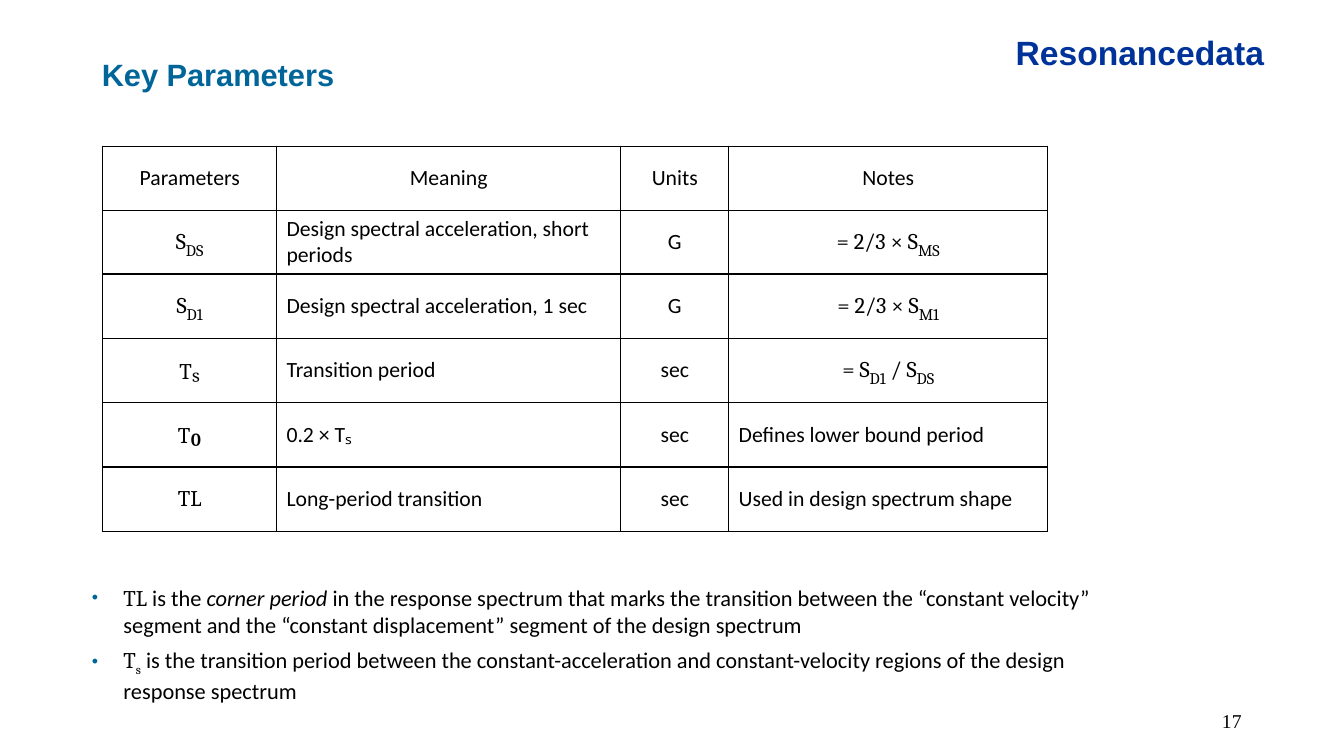
"""Build the Key Parameters slide: a table of spectrum parameters with two notes."""
import lxml.etree
import pptx
import pptx.dml.color
import pptx.enum.text
import pptx.oxml.ns
import pptx.util

Pt = pptx.util.Pt
ALIGN = pptx.enum.text.PP_ALIGN
ANCHOR = pptx.enum.text.MSO_ANCHOR

COLORS = {"ink": "000000", "paper": "FFFFFF", "heading": "006699", "wordmark": "003399"}

FORMATS = {
    "heading": {"name": "Arial", "size": Pt(22), "bold": True, "color": "heading"},
    "wordmark": {"name": "Arial", "size": Pt(24), "bold": True, "color": "wordmark"},
    "number": {"name": "Times New Roman", "size": Pt(14), "color": "ink"},
    "cell": {"name": "Calibri", "size": Pt(15.5), "color": "ink"},
    "symbol": {"name": "Cambria", "size": Pt(16), "color": "ink"},
    "glyph": {"name": "Cambria", "size": Pt(20), "color": "ink"},
    "sub": {"name": "Cambria", "size": Pt(20), "color": "ink", "baseline": -25000},
    "note": {"name": "Calibri", "size": Pt(16), "color": "ink"},
    "term": {"name": "Calibri", "size": Pt(16), "italic": True, "color": "ink"},
    "note_sub": {"name": "Cambria", "size": Pt(16), "color": "ink", "baseline": -25000},
}

HEADING = [("Key Parameters", "heading")]
WORDMARK = [("Resonancedata", "wordmark")]
NUMBER = [("17", "number")]

HEADERS = ["Parameters", "Meaning", "Units", "Notes"]
PARAMETERS = [
    ([("S", "symbol"), ("DS", "sub")], "Design spectral acceleration, short periods", "G",
     [("= 2/3 × S", "symbol"), ("MS", "sub")]),
    ([("S", "symbol"), ("D1", "sub")], "Design spectral acceleration, 1 sec", "G",
     [("= 2/3 × S", "symbol"), ("M1", "sub")]),
    ([("T", "symbol"), ("ₛ", "glyph")], "Transition period", "sec",
     [("= S", "symbol"), ("D1", "sub"), (" / S", "symbol"), ("DS", "sub")]),
    ([("T", "symbol"), ("₀", "glyph")], "0.2 × Tₛ", "sec", "Defines lower bound period"),
    ([("TL", "symbol")], "Long-period transition", "sec", "Used in design spectrum shape"),
]
NOTES = [
    [("TL", "symbol"), (" is the ", "note"), ("corner period", "term"),
     (" in the response spectrum that marks the transition between the “constant velocity” "
      "segment and the “constant displacement” segment of the design spectrum", "note")],
    [("T", "symbol"), ("s", "note_sub"),
     (" is the transition period between the constant-acceleration and constant-velocity "
      "regions of the design response spectrum", "note")],
]

COLUMN_WIDTHS = [124, 246, 77, 228]
ROW_HEIGHTS = [46, 42, 46, 46, 46, 46]
UNITS_COLUMN = 2


def rgb(color):
    return pptx.dml.color.RGBColor.from_string(COLORS[color])


def add_element(parent, tag, **attributes):
    element = lxml.etree.SubElement(parent, pptx.oxml.ns.qn(tag))
    for key, value in attributes.items():
        element.set(key, value)
    return element


def write(paragraph, pieces, align=ALIGN.LEFT):
    paragraph.alignment = align
    for words, style in pieces:
        run = paragraph.add_run()
        run.text = words
        for key, value in FORMATS[style].items():
            if key == "color":
                run.font.color.rgb = rgb(value)
            elif key == "baseline":
                run._r.get_or_add_rPr().set(key, str(value))
            else:
                setattr(run.font, key, value)


def place(shape, left, top, width, height, wrap=True, anchor=ANCHOR.TOP):
    bounds = {"left": left, "top": top, "width": width, "height": height}
    for key, value in bounds.items():
        setattr(shape, key, Pt(value))
    frame = shape.text_frame
    layout = {"auto_size": pptx.enum.text.MSO_AUTO_SIZE.NONE,
              "word_wrap": wrap, "vertical_anchor": anchor}
    for key, value in layout.items():
        setattr(frame, key, value)
    return frame


def add_parameters(slide):
    table = slide.shapes.add_table(
        len(ROW_HEIGHTS), len(COLUMN_WIDTHS), Pt(73.5), Pt(104.5),
        Pt(sum(COLUMN_WIDTHS)), Pt(sum(ROW_HEIGHTS))).table
    table.first_row = table.horz_banding = False
    for column, width in zip(table.columns, COLUMN_WIDTHS):
        column.width = Pt(width)
    for row, height in zip(table.rows, ROW_HEIGHTS):
        row.height = Pt(height)
    for r, entries in enumerate([HEADERS, *PARAMETERS]):
        for c, entry in enumerate(entries):
            cell = table.cell(r, c)
            prose = isinstance(entry, str)
            centred = r == 0 or c == UNITS_COLUMN or not prose
            pieces = [(entry, "cell")] if prose else entry
            write(cell.text_frame.paragraphs[0], pieces,
                  ALIGN.CENTER if centred else ALIGN.LEFT)
            cell.vertical_anchor = ANCHOR.MIDDLE
            for side in "LRTB":
                border = add_element(cell._tc.get_or_add_tcPr(), f"a:ln{side}", w=str(Pt(1)))
                ink = add_element(border, "a:solidFill")
                add_element(ink, "a:srgbClr", val=COLORS["ink"])
            cell.fill.solid()
            cell.fill.fore_color.rgb = rgb("paper")


def add_notes(body):
    frame = place(body, 58.5, 413.5, 738.5, 116.5)
    for index, pieces in enumerate(NOTES):
        paragraph = frame.add_paragraph() if index else frame.paragraphs[0]
        properties = paragraph._p.get_or_add_pPr()
        properties.set("marL", str(Pt(22.5)))
        properties.set("indent", str(Pt(-22.5)))
        tint = add_element(properties, "a:buClr")
        add_element(tint, "a:srgbClr", val=COLORS["heading"])
        add_element(properties, "a:buSzPct", val="80000")
        add_element(properties, "a:buFont", typeface="Arial")
        add_element(properties, "a:buChar", char="•")
        paragraph.space_before = Pt(0)
        paragraph.space_after = Pt(6)
        write(paragraph, pieces)


def main():
    deck = pptx.Presentation()
    deck.slide_width, deck.slide_height = Pt(960), Pt(540)
    slide = deck.slides.add_slide(deck.slide_layouts[1])
    heading, body = slide.placeholders

    number = place(slide.shapes.add_textbox(0, 0, 0, 0), 678, 500.5, 216, 29,
                   anchor=ANCHOR.MIDDLE)
    write(number.paragraphs[0], NUMBER, ALIGN.RIGHT)
    wordmark = place(slide.shapes.add_textbox(0, 0, 0, 0), 736, 19.5, 174, 36, wrap=False)
    write(wordmark.paragraphs[0], WORDMARK, ALIGN.RIGHT)
    write(place(heading, 65.5, 36, 182, 34, wrap=False).paragraphs[0], HEADING)

    add_parameters(slide)
    add_notes(body)
    deck.save("out.pptx")


if __name__ == "__main__":
    main()
